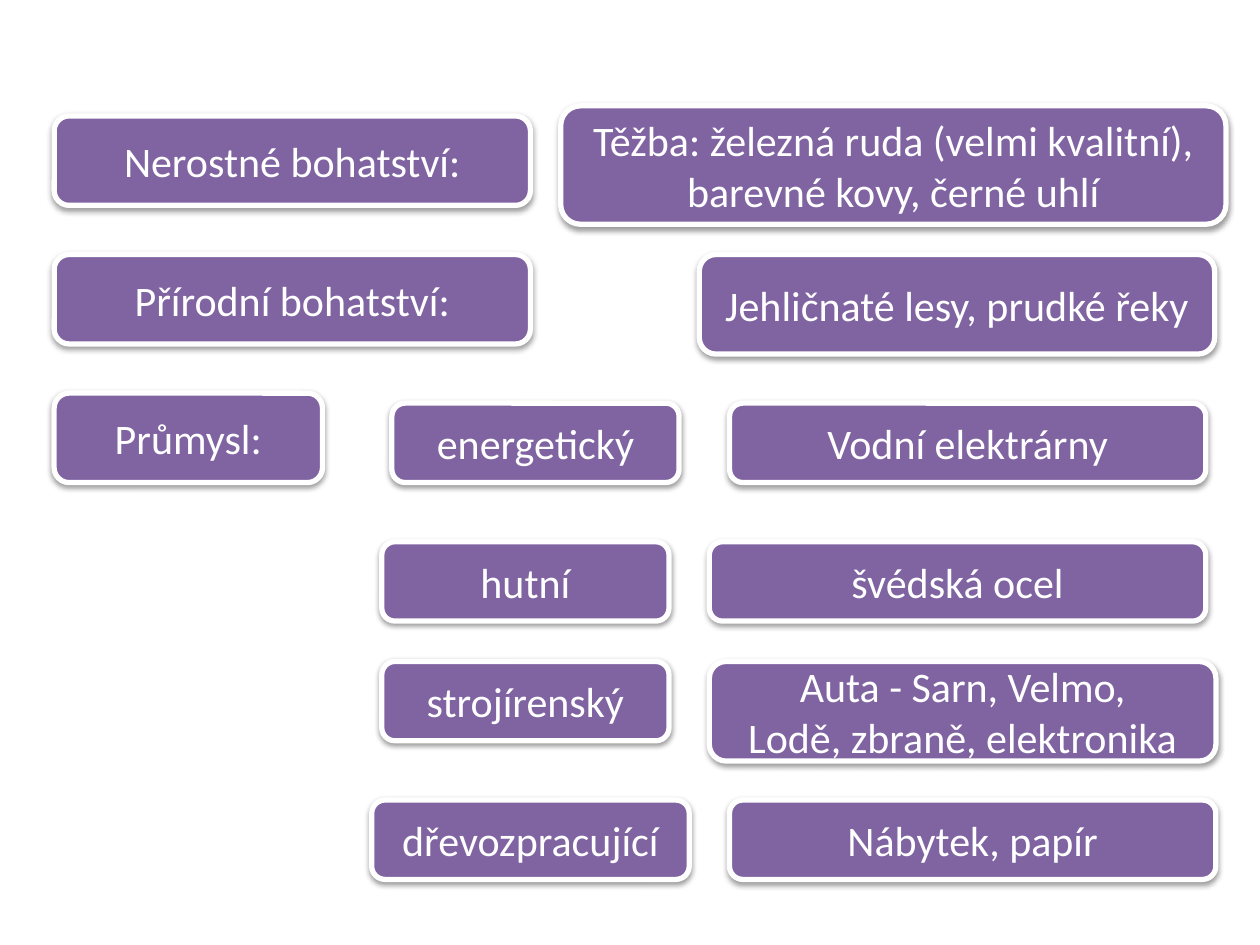
from lxml import etree
from pptx import Presentation
from pptx.dml.color import RGBColor
from pptx.enum import shapes, text
from pptx.oxml import ns
from pptx.util import Inches, Pt

PURPLE, WHITE, BLACK = "8064A2", "FFFFFF", "000000"

TOPICS = [
    (0.43, 0.92, 3.78, 0.71, ["Nerostné bohatství:"]),
    (0.43, 2.02, 3.78, 0.71, ["Přírodní bohatství:"]),
    (0.43, 3.12, 2.13, 0.71, ["Průmysl:"]),
]
RESOURCES = [
    (4.45, 0.84, 5.28, 0.94, ["Těžba: železná ruda (velmi kvalitní), barevné kovy, černé uhlí"]),
    (5.55, 2.02, 4.09, 0.79, ["Jehličnaté lesy, prudké řeky"]),
]
INDUSTRIES = [
    (3.11, 3.2, 2.28, 0.63, ["energetický"]),
    (3.03, 4.3, 2.28, 0.63, ["hutní"]),
    (3.03, 5.25, 2.28, 0.63, ["strojírenský"]),
    (2.95, 6.35, 2.52, 0.63, ["dřevozpracující"]),
]
PRODUCTS = [
    (5.79, 3.2, 3.78, 0.63, ["Vodní elektrárny"]),
    (5.63, 4.3, 3.94, 0.63, ["švédská ocel"]),
    (5.63, 5.25, 4.02, 0.79, ["Auta - Sarn, Velmo,", "Lodě, zbraně, elektronika"]),
    (5.79, 6.35, 3.86, 0.63, ["Nábytek, papír"]),
]


def color(value):
    """Turn a hex string into a colour."""
    return RGBColor.from_string(value)


def add_shadow(shape):
    """Give a shape a soft shadow falling straight down."""
    shape.shadow.inherit = False
    effects = shape._element.spPr.find(ns.qn("a:effectLst"))
    shadow = etree.SubElement(
        effects, ns.qn("a:outerShdw"), blurRad="40000", dist="20000",
        dir="5400000", rotWithShape="0")
    tint = etree.SubElement(shadow, ns.qn("a:srgbClr"), val=BLACK)
    etree.SubElement(tint, ns.qn("a:alpha"), val="38000")


def write(frame, lines, size=24, font="Calibri", fill=WHITE, align=text.PP_ALIGN.CENTER):
    """Write each line as a formatted paragraph."""
    for index, line in enumerate(lines):
        para = frame.add_paragraph() if index else frame.paragraphs[0]
        para.alignment = align
        span = para.add_run()
        span.text = line
        span.font.size = Pt(size)
        span.font.name = font
        span.font.color.rgb = color(fill)


def add_card(page, left, top, width, height, lines):
    """Add a rounded purple card with a white border and centred text."""
    card = page.shapes.add_shape(
        shapes.MSO_SHAPE.ROUNDED_RECTANGLE,
        Inches(left), Inches(top), Inches(width), Inches(height))
    card.fill.solid()
    card.fill.fore_color.rgb = color(PURPLE)
    card.line.color.rgb = color(WHITE)
    card.line.width = Pt(3)
    add_shadow(card)
    frame = card.text_frame
    frame.word_wrap = True
    frame.vertical_anchor = text.MSO_ANCHOR.MIDDLE
    write(frame, lines)


def main():
    """Build the slide and save the deck."""
    deck = Presentation()
    deck.slide_width, deck.slide_height = Inches(10), Inches(7.5)
    page = deck.slides.add_slide(deck.slide_layouts[6])
    for card in TOPICS + RESOURCES + INDUSTRIES + PRODUCTS:
        add_card(page, *card)
    deck.save("out.pptx")


if __name__ == "__main__":
    main()
